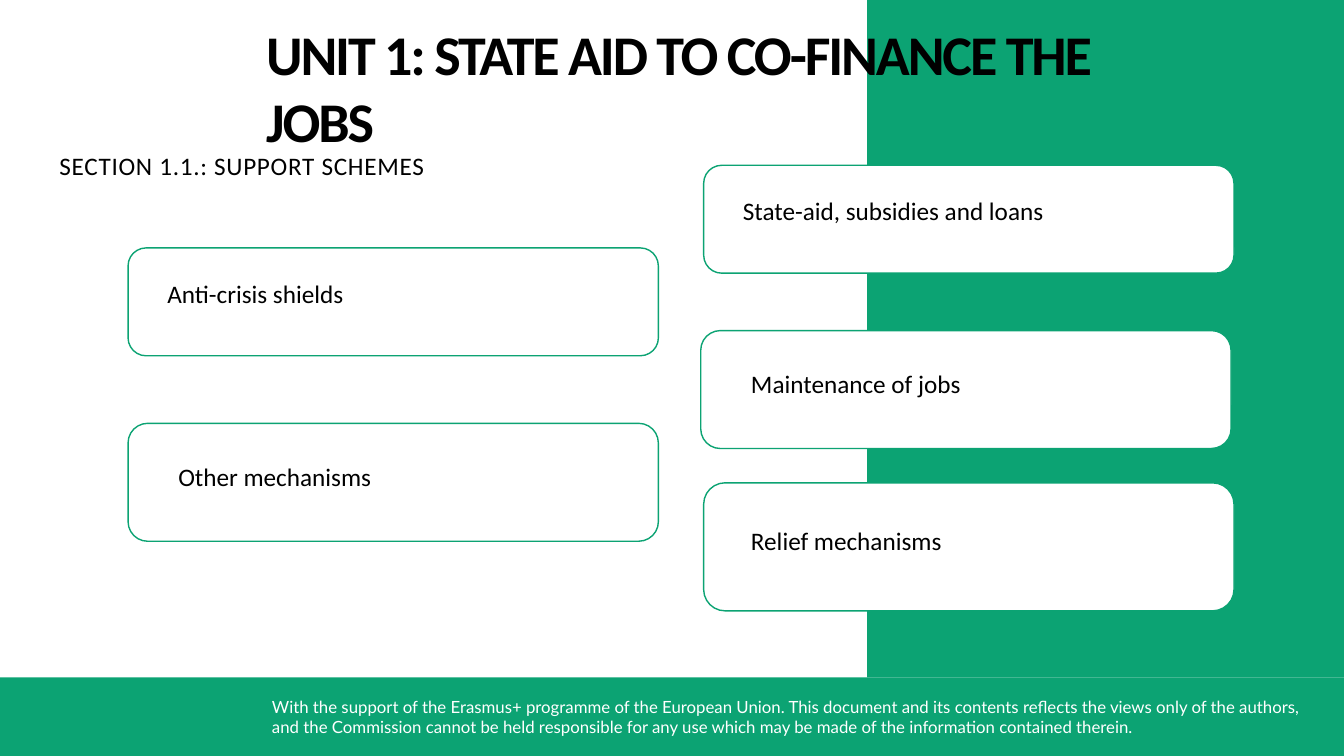
import collections

import pptx
import pptx.dml.color
import pptx.enum.shapes
import pptx.enum.text
import pptx.util

TITLE = "UNIT 1: STATE AID TO CO-FINANCE THE JOBS"
SECTION = "SECTION 1.1.: SUPPORT SCHEMES"
NOTICE = (
    "With the support of the Erasmus+ programme of the European Union. "
    "This document and its contents reflects the views only of the authors, "
    "and the Commission cannot be held responsible for any use which may be "
    "made of the information contained therein."
)

# All places are percent of the slide's width and height.
Card = collections.namedtuple("Card", "text left top height inset")
CARDS = [
    Card("State-aid, subsidies and loans", 52.36, 21.87, 14.27, (2.18, 3.33)),
    Card("Maintenance of jobs", 52.14, 43.73, 15.6, (3, 4.27)),
    Card("Relief mechanisms", 52.36, 63.87, 16.93, (2.78, 4.93)),
    Card("Anti-crisis shields", 9.53, 32.8, 14.27, (2.18, 3.33)),
    Card("Other mechanisms", 9.53, 56, 15.6, (3, 4.4)),
]
CARD_WIDTH = 39.46
LABEL_SIZE = (29.03, 5.33)
SPLIT, FLOOR = 64.52, 89.6
PANELS = [
    (0, FLOOR, 100, 100 - FLOOR),
    (SPLIT, 0, 100 - SPLIT, FLOOR),
]
TITLE_AREA = (19.8, 2.53, 67.37, 9.2)
SECTION_AREA = (3.68, 19.2, 49.96, 5.33)
NOTICE_AREA = (19.5, 91.47, 78.17, 6.67)

Theme = collections.namedtuple("Theme", "green white black head body small main note")
THEME = Theme("0CA373", "FFFFFF", "000000", 40, 18, 12, "Calibri", "Lato")

deck = pptx.Presentation()
deck.slide_width = pptx.util.Inches(13.33)
deck.slide_height = pptx.util.Inches(7.5)
slide = deck.slides.add_slide(deck.slide_layouts[5])


def color(code):
    return pptx.dml.color.RGBColor.from_string(code)


def place(area):
    """Turn percent of the slide into lengths."""
    sides = (deck.slide_width, deck.slide_height) * 2
    return [int(side * part / 100) for side, part in zip(sides, area)]


def block(kind, area, fill, edge=None):
    shape = slide.shapes.add_shape(kind, *place(area))
    shape.shadow.inherit = False
    shape.fill.solid()
    shape.fill.fore_color.rgb = color(fill)
    if edge:
        shape.line.color.rgb = color(edge)
        shape.line.width = pptx.util.Pt(1)
    else:
        shape.line.fill.background()


def write(text, area, box=None, size=THEME.body, font=THEME.main,
          ink=THEME.black, bold=False, track=0, inset=None):
    """Fill a new or given box; track is letter spacing in points."""
    spot = place(area)
    if box is None:
        box = slide.shapes.add_textbox(*spot)
    else:
        box.left, box.top, box.width, box.height = spot
    frame = box.text_frame
    frame.word_wrap = True
    frame.auto_size = pptx.enum.text.MSO_AUTO_SIZE.NONE
    frame.vertical_anchor = pptx.enum.text.MSO_ANCHOR.TOP
    if inset is not None:
        frame.margin_left = frame.margin_right = inset
        frame.margin_top = frame.margin_bottom = inset
    line = frame.paragraphs[0]
    line.alignment = pptx.enum.text.PP_ALIGN.LEFT
    run = line.add_run()
    run.text = text
    run.font.size = pptx.util.Pt(size)
    run.font.name = font
    run.font.bold = bold
    run.font.color.rgb = color(ink)
    if track:
        run.font._element.set("spc", str(int(track * 100)))


def main():
    shapes = pptx.enum.shapes.MSO_SHAPE
    for area in PANELS:
        block(shapes.RECTANGLE, area, THEME.green)

    title = slide.shapes.title
    title._element.getparent().append(title._element)  # bring above the panels
    write(TITLE, TITLE_AREA, box=title, size=THEME.head, bold=True,
          track=-1.5, inset=0)
    write(NOTICE, NOTICE_AREA, size=THEME.small, font=THEME.note, ink=THEME.white)

    for card in CARDS:
        area = (card.left, card.top, CARD_WIDTH, card.height)
        block(shapes.ROUNDED_RECTANGLE, area, THEME.white, THEME.green)
        right, down = card.inset
        write(card.text, (card.left + right, card.top + down, *LABEL_SIZE))
    write(SECTION, SECTION_AREA, track=0.5)

    deck.save("out.pptx")


if __name__ == "__main__":
    main()
